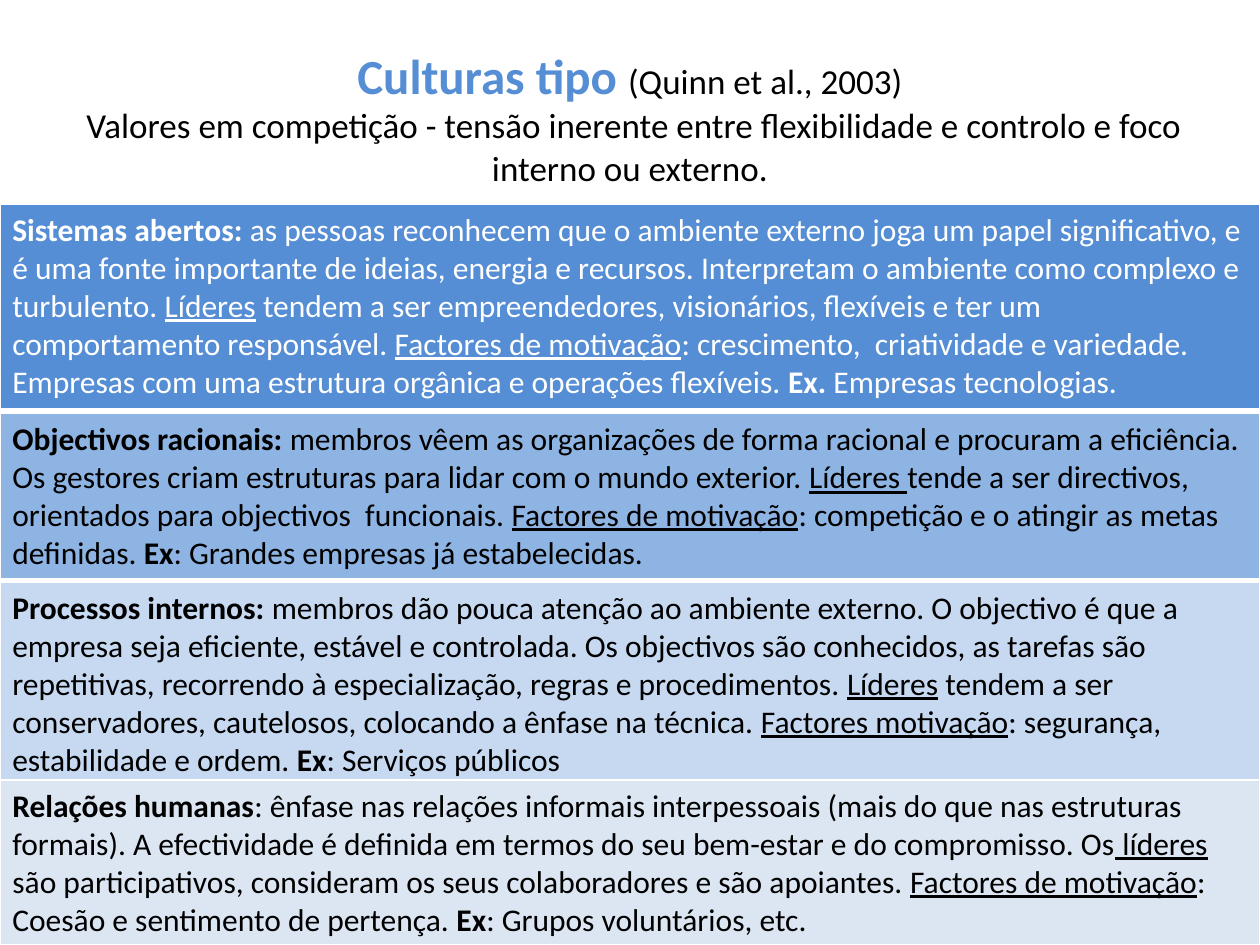
from pptx import Presentation
from pptx.dml.color import RGBColor
from pptx.enum.shapes import MSO_SHAPE
from pptx.enum.text import MSO_ANCHOR, MSO_AUTO_SIZE, PP_ALIGN
from pptx.util import Inches, Pt


def color(hex_value):
    return RGBColor.from_string(hex_value)


def add_run(paragraph, text, size, hex_value, style=""):
    run = paragraph.add_run()
    run.text = text
    run.font.name = "Calibri"
    run.font.size = Pt(size)
    run.font.color.rgb = color(hex_value)
    run.font.bold = style == "bold"
    run.font.underline = style == "underline"


cultures = [
    (1.62, 1.62, "558ED5", "FFFFFF", [
        ("Sistemas abertos: ", "bold"),
        ("as pessoas reconhecem que o ambiente externo joga um papel significativo, "
         "e é uma fonte importante de ideias, energia e recursos. Interpretam o "
         "ambiente como complexo e turbulento. ", ""),
        ("Líderes", "underline"),
        (" tendem a ser empreendedores, visionários, flexíveis e ter um "
         "comportamento responsável. ", ""),
        ("Factores de motivação", "underline"),
        (": crescimento,  criatividade e variedade. Empresas com uma estrutura "
         "orgânica e operações flexíveis. ", ""),
        ("Ex.", "bold"),
        (" Empresas tecnologias.", ""),
    ]),
    (3.28, 1.31, "8EB4E3", "000000", [
        ("Objectivos racionais: ", "bold"),
        ("membros vêem as organizações de forma racional e procuram a eficiência. "
         "Os gestores criam estruturas para lidar com o mundo exterior. ", ""),
        ("Líderes ", "underline"),
        ("tende a ser directivos, orientados para objectivos  funcionais. ", ""),
        ("Factores de motivação", "underline"),
        (": competição e o atingir as metas definidas. ", ""),
        ("Ex", "bold"),
        (": Grandes empresas já estabelecidas.", ""),
    ]),
    (4.62, 1.62, "C6D9F1", "000000", [
        ("Processos internos: ", "bold"),
        ("membros dão pouca atenção ao ambiente externo. O objectivo é que a "
         "empresa seja eficiente, estável e controlada. Os objectivos são "
         "conhecidos, as tarefas são repetitivas, recorrendo à especialização, "
         "regras e procedimentos. ", ""),
        ("Líderes", "underline"),
        (" tendem a ser conservadores, cautelosos, colocando a ênfase na técnica. ", ""),
        ("Factores motivação", "underline"),
        (": segurança, estabilidade e ordem.", ""),
        (" Ex", "bold"),
        (": Serviços públicos", ""),
    ]),
    (6.19, 1.31, "DCE6F2", "000000", [
        ("Relações humanas", "bold"),
        (": ênfase nas relações informais interpessoais (mais do que nas estruturas "
         "formais). A efectividade é definida em termos do seu bem-estar e do "
         "compromisso. Os", ""),
        (" líderes ", "underline"),
        ("são participativos, consideram os seus colaboradores e são apoiantes. ", ""),
        ("Factores de motivação", "underline"),
        (": Coesão e sentimento de pertença. ", ""),
        ("Ex", "bold"),
        (": Grupos voluntários, etc.", ""),
    ]),
]

prs = Presentation()
prs.slide_width = Inches(10)
prs.slide_height = Inches(7.5)
slide = prs.slides.add_slide(prs.slide_layouts[6])

heading = slide.shapes.add_textbox(Inches(0.5), Inches(0.3), Inches(9), Inches(1.25))
heading_frame = heading.text_frame
heading_frame.word_wrap = True
heading_frame.vertical_anchor = MSO_ANCHOR.MIDDLE
heading_line = heading_frame.paragraphs[0]
heading_line.alignment = PP_ALIGN.CENTER
add_run(heading_line, "Culturas tipo ", 28, "558ED5", "bold")
add_run(heading_line, "(Quinn et al., 2003)", 20, "000000")
heading_line.add_line_break()
add_run(heading_line, " Valores em competição - tensão inerente entre flexibilidade e "
        "controlo e foco interno ou externo.", 20, "000000")

for top, height, band_color, text_color, passages in cultures:
    band = slide.shapes.add_shape(
        MSO_SHAPE.RECTANGLE, Inches(0), Inches(top), Inches(10), Inches(height))
    band.shadow.inherit = False
    band.fill.solid()
    band.fill.fore_color.rgb = color(band_color)
    band.line.color.rgb = color("FFFFFF")
    band.line.width = Pt(0.75)
    frame = band.text_frame
    frame.word_wrap = True
    frame.auto_size = MSO_AUTO_SIZE.SHAPE_TO_FIT_TEXT
    frame.vertical_anchor = MSO_ANCHOR.TOP
    description = frame.paragraphs[0]
    description.alignment = PP_ALIGN.LEFT
    for text, style in passages:
        add_run(description, text, 18, text_color, style)

prs.save("out.pptx")
